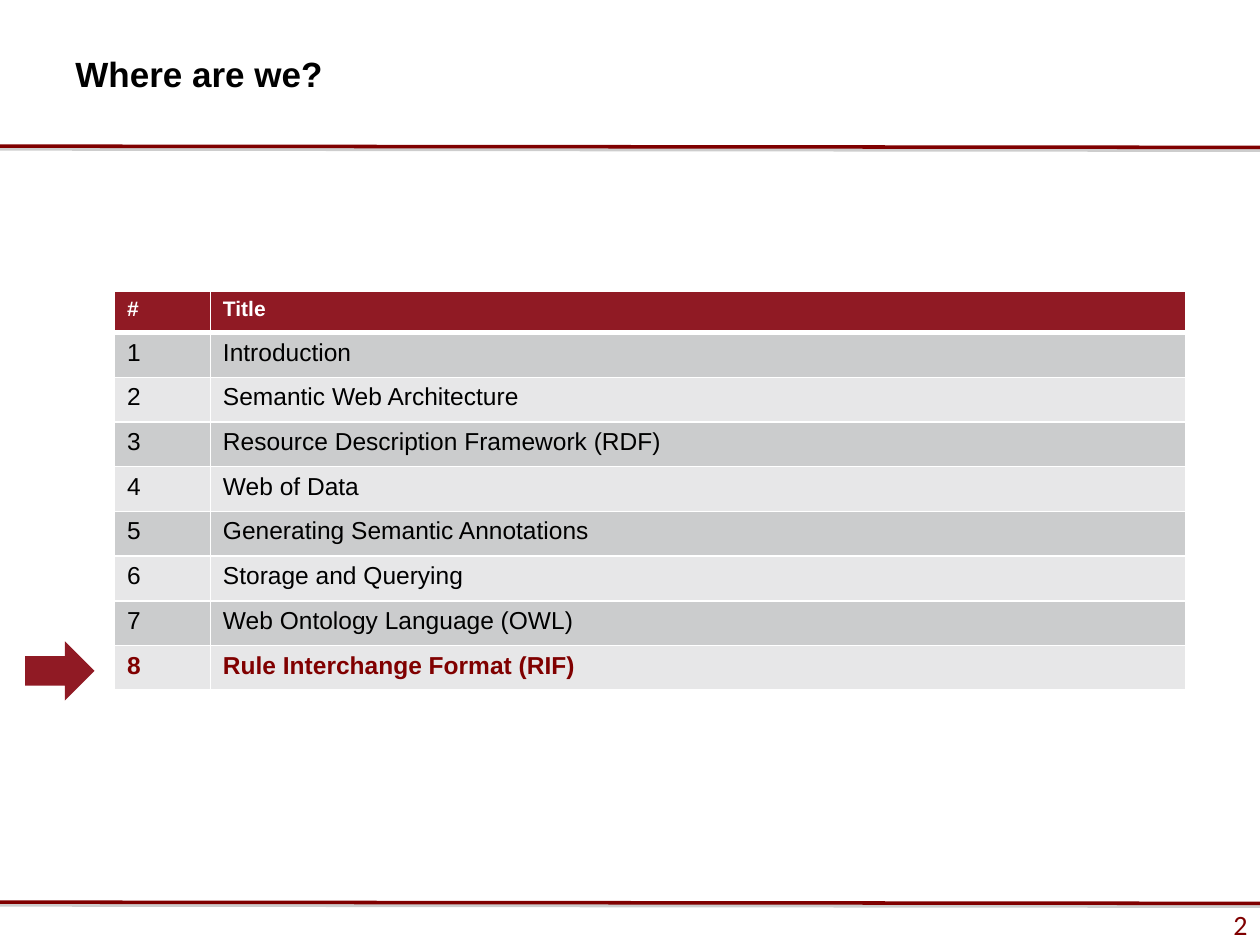
from lxml import etree
from pptx import Presentation
from pptx.dml.color import RGBColor
from pptx.enum import shapes, text
from pptx.oxml import parse_xml
from pptx.oxml.ns import nsdecls
from pptx.util import Inches, Pt

WHITE = RGBColor(0xFF, 0xFF, 0xFF)
BLACK = RGBColor(0x00, 0x00, 0x00)
MAROON = RGBColor(0x80, 0x00, 0x00)
CRIMSON = RGBColor(0x90, 0x1A, 0x24)
DARK_BAND = RGBColor(0xCB, 0xCC, 0xCD)
LIGHT_BAND = RGBColor(0xE7, 0xE7, 0xE8)

LECTURES = [
    "Introduction",
    "Semantic Web Architecture",
    "Resource Description Framework (RDF)",
    "Web of Data",
    "Generating Semantic Annotations",
    "Storage and Querying",
    "Web Ontology Language (OWL)",
    "Rule Interchange Format (RIF)",
]
CURRENT = len(LECTURES)
HEADER_HEIGHT, ROW_HEIGHT = 0.33, 0.355


def write(frame, content, color, **font_format):
    paragraph = frame.paragraphs[0]
    run = paragraph.add_run()
    run.text = content
    run.font.color.rgb = color
    for name, value in font_format.items():
        setattr(run.font, name, value)
    return paragraph


def add_borders(cell, widths):
    """Draw white cell borders; widths maps a side (L, R, T, B) to points."""
    properties = cell._tc.get_or_add_tcPr()
    for side, width in widths.items():
        properties.append(parse_xml(
            f'<a:ln{side} {nsdecls("a")} w="{Pt(width)}"><a:solidFill>'
            f'<a:srgbClr val="{WHITE}"/></a:solidFill></a:ln{side}>'))


presentation = Presentation()
presentation.slide_width = Inches(10)
presentation.slide_height = Inches(7.5)
slide = presentation.slides.add_slide(presentation.slide_layouts[6])

# Footer bar with the slide number
footer = slide.shapes.add_shape(
    shapes.MSO_SHAPE.RECTANGLE, Inches(0), Inches(7.21), Inches(10), Inches(0.25))
footer.shadow.inherit = False
footer.fill.solid()
footer.fill.fore_color.rgb = WHITE
footer.line.fill.background()
footer.text_frame.word_wrap = False
footer.text_frame.vertical_anchor = text.MSO_ANCHOR.MIDDLE
number = write(footer.text_frame, "2", MAROON, name="Calibri", size=Pt(16))
number.alignment = text.PP_ALIGN.RIGHT

# Rules below the title and above the footer
for top in (1.16, 7.16):
    rule = slide.shapes.add_connector(
        shapes.MSO_CONNECTOR.STRAIGHT,
        Inches(0), Inches(top), Inches(10), Inches(top + 0.01))
    rule.line.color.rgb = MAROON
    rule.line.width = Pt(2)
    rule._element.spPr.append(parse_xml(
        f'<a:effectLst {nsdecls("a")}>'
        f'<a:outerShdw blurRad="0" dist="{Pt(1.6)}" dir="5400000" rotWithShape="0">'
        '<a:srgbClr val="808080"><a:alpha val="38000"/></a:srgbClr>'
        '</a:outerShdw></a:effectLst>'))

title = slide.shapes.add_textbox(Inches(0.5), Inches(0.33), Inches(6.33), Inches(0.5))
title.text_frame.word_wrap = True
title.text_frame.vertical_anchor = text.MSO_ANCHOR.MIDDLE
write(title.text_frame, "Where are we?", BLACK, name="Arial", size=Pt(20), bold=True)

# Lecture list, with the current lecture highlighted
rows = [("#", "Title")] + [(str(i), name) for i, name in enumerate(LECTURES, 1)]
table = slide.shapes.add_table(
    len(rows), 2, Inches(0.91), Inches(2.31), Inches(8.5),
    Inches(HEADER_HEIGHT + ROW_HEIGHT * len(LECTURES))).table
for column, width in zip(table.columns, (0.76, 7.74)):
    column.width = Inches(width)
for index, row in enumerate(rows):
    is_header = index == 0
    table.rows[index].height = Inches(HEADER_HEIGHT if is_header else ROW_HEIGHT)
    if is_header:
        fill, color = CRIMSON, WHITE
    else:
        fill = DARK_BAND if index % 2 else LIGHT_BAND
        color = MAROON if index == CURRENT else BLACK
    for column_index, content in enumerate(row):
        cell = table.cell(index, column_index)
        add_borders(cell, {"L": 1, "R": 1, "T": 3 if index == 1 else 1,
                           "B": 3 if is_header else 1})
        cell.fill.solid()
        cell.fill.fore_color.rgb = fill
        write(cell.text_frame, content, color, name="Arial",
              size=Pt(12 if is_header else 14), bold=index in (0, CURRENT))

# Arrow pointing at the current lecture
arrow = slide.shapes.add_shape(
    shapes.MSO_SHAPE.RIGHT_ARROW, Inches(0.2), Inches(5.09), Inches(0.55), Inches(0.47))
arrow.shadow.inherit = False
arrow.fill.solid()
arrow.fill.fore_color.rgb = CRIMSON
arrow.line.fill.background()

presentation.save("out.pptx")
